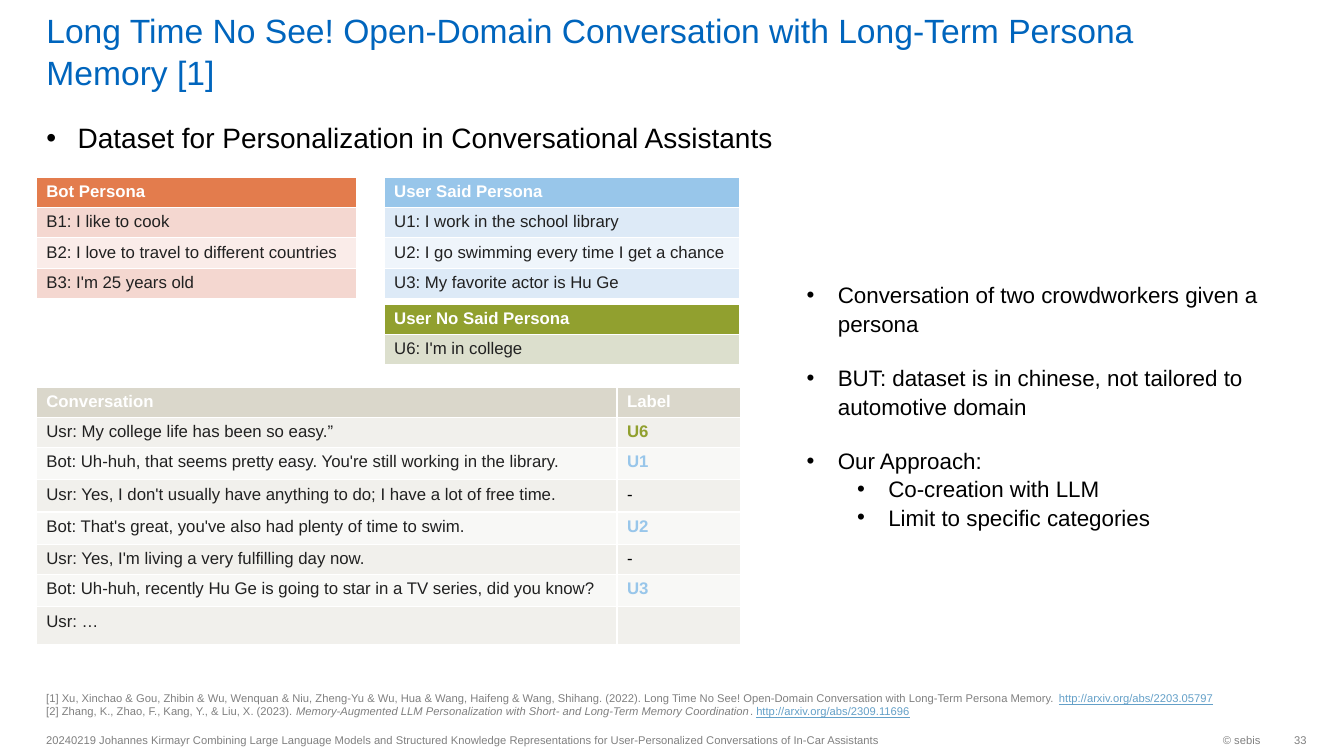
from lxml.etree import SubElement
from pptx import Presentation
from pptx.dml.color import RGBColor
from pptx.enum.text import MSO_ANCHOR as Anchor, MSO_AUTO_SIZE as Auto, PP_ALIGN as Align
from pptx.oxml.ns import qn
from pptx.util import Inches, Pt


def hue(code):
    return RGBColor.from_string(code)


def write(para, text, size=12, color="212121", bold=False, italic=False, line=False):
    run = para.add_run()
    run.text = text
    font = run.font
    font.name, font.size = "Arial", Pt(size)
    font.bold, font.italic, font.underline = bold, italic, line
    font.color.rgb = hue(color)


BLACK, GRAY, WHITE, LINK = "000000", "808080", "FFFFFF", "64A0C8"
SKY, OLIVE = "98C6EA", "91A02F"

deck = Presentation()
deck.slide_width, deck.slide_height = Inches(13.33), Inches(7.5)
slide = deck.slides.add_slide(deck.slide_layouts[3])
title, intro, notes = slide.placeholders

for holder, place in [
    (title, (0.36, 0.12, 11.58, 0.79)),
    (intro, (0.36, 1.13, 7.53, 0.5)),
    (notes, (7.9, 2.73, 5.07, 2.52)),
]:
    holder.left, holder.top, holder.width, holder.height = map(Inches, place)
    holder.text_frame.auto_size = Auto.NONE

frame = title.text_frame
frame.vertical_anchor = Anchor.BOTTOM
frame.margin_top = frame.margin_bottom = 0
head = frame.paragraphs[0]
head.alignment, head.line_spacing = Align.LEFT, 1.04
for step, text in enumerate(["Long Time No See! Open-Domain Conversation with Long-Term Persona", "Memory [1]"]):
    if step:
        head.add_line_break()
    write(head, text, size=24, color="0065BD")

lists = [
    (intro, 20, [("Dataset for Personalization in Conversational Assistants", 0, 0)]),
    (notes, 16, [
        ("Conversation of two crowdworkers given a persona", 0, 0),
        ("BUT: dataset is in chinese, not tailored to automotive domain", 0, 19),
        ("Our Approach:", 0, 19),
        ("Co-creation with LLM", 1, 0),
        ("Limit to specific categories", 1, 0),
    ]),
]
for holder, size, items in lists:
    frame = holder.text_frame
    for step, (text, level, gap) in enumerate(items):
        para = frame.add_paragraph() if step else frame.paragraphs[0]
        para.level, para.line_spacing, para.space_before = level, 1.05, Pt(gap)
        props = para._p.get_or_add_pPr()
        props.set("marL", str(Inches(0.31 + 0.5 * level)))
        props.set("indent", str(Inches(-0.31)))
        SubElement(props, qn("a:buChar")).set("char", "•")
        write(para, text, size=size, color=BLACK)

tones = {"U6": OLIVE, "U1": SKY, "U2": SKY, "U3": SKY}
tables = [
    (0.36, 1.76, [3.18], ["E37C4D", "F4D7D0", "FAECE9"], [
        ["Bot Persona"],
        ["B1: I like to cook"],
        ["B2: I love to travel to different countries"],
        ["B3: I'm 25 years old"],
    ]),
    (3.81, 1.76, [3.53], [SKY, "DDEAF7", "EFF5FB"], [
        ["User Said Persona"],
        ["U1: I work in the school library"],
        ["U2: I go swimming every time I get a chance"],
        ["U3: My favorite actor is Hu Ge"],
    ]),
    (3.81, 3.02, [3.53], [OLIVE, "DCDFCD"], [
        ["User No Said Persona"],
        ["U6: I'm in college"],
    ]),
    (0.36, 3.84, [5.76, 1.23], ["DAD7CB", "F1F0EC", "F8F8F6"], [
        ["Conversation", "Label"],
        ["Usr: My college life has been so easy.”", "U6"],
        ["Bot: Uh-huh, that seems pretty easy. You're still working in the library.", "U1"],
        ["Usr: Yes, I don't usually have anything to do; I have a lot of free time.", "-"],
        ["Bot: That's great, you've also had plenty of time to swim.", "U2"],
        ["Usr: Yes, I'm living a very fulfilling day now.", "-"],
        ["Bot: Uh-huh, recently Hu Ge is going to star in a TV series, did you know?", "U3"],
        ["Usr: …", ""],
    ]),
]
for left, top, widths, fills, rows in tables:
    tall = [0.32 if len(widths) > 1 and r in (2, 3, 4, 6) else 0.3 for r in range(len(rows))]
    grid = slide.shapes.add_table(
        len(rows), len(widths), Inches(left), Inches(top), Inches(sum(widths)), Inches(sum(tall))
    ).table
    for c, width in enumerate(widths):
        grid.columns[c].width = Inches(width)
    for r, row in enumerate(rows):
        grid.rows[r].height = Inches(tall[r])
        for c, text in enumerate(row):
            cell = grid.cell(r, c)
            cell.fill.solid()
            cell.fill.fore_color.rgb = hue(fills[2 - r % 2] if r else fills[0])
            color = tones.get(text, BLACK if c else "212121") if r else WHITE
            write(cell.text_frame.paragraphs[0], text, color=color, bold=r == 0 or text in tones)

link = {"color": LINK, "line": True}
boxes = [
    ((0.36, 6.81, 12.6, 0.36), Anchor.TOP, Align.LEFT, 0.1, [
        [("[1] Xu, Xinchao & Gou, Zhibin & Wu, Wenquan & Niu, Zheng-Yu & Wu, Hua & Wang, Haifeng & Wang, Shihang. (2022). Long Time No See! Open-Domain Conversation with Long-Term Persona Memory. ", {}),
         ("http://arxiv.org/abs/2203.05797", link)],
        [("[2] Zhang, K., Zhao, F., Kang, Y., & Liu, X. (2023). ", {}),
         ("Memory-Augmented LLM Personalization with Short- and Long-Term Memory Coordination", {"italic": True}),
         (". ", {}),
         ("http://arxiv.org/abs/2309.11696", link)],
    ]),
    ((0.36, 7.18, 9.37, 0.32), Anchor.MIDDLE, Align.LEFT, 0.1, [
        [("20240219 Johannes Kirmayr Combining Large Language Models and Structured Knowledge Representations for User-Personalized Conversations of In-Car Assistants", {})],
    ]),
    ((10.26, 7.18, 2.34, 0.32), Anchor.MIDDLE, Align.RIGHT, 0.1, [[("© sebis", {})]]),
    ((12.6, 7.18, 0.36, 0.32), Anchor.MIDDLE, Align.RIGHT, 0, [[("33", {})]]),
]
for place, anchor, align, inset, lines in boxes:
    frame = slide.shapes.add_textbox(*map(Inches, place)).text_frame
    frame.word_wrap, frame.vertical_anchor = True, anchor
    frame.margin_right = Inches(inset)
    for step, parts in enumerate(lines):
        para = frame.add_paragraph() if step else frame.paragraphs[0]
        para.alignment = align
        for text, style in parts:
            write(para, text, **{"size": 8, "color": GRAY, **style})

deck.save("out.pptx")
